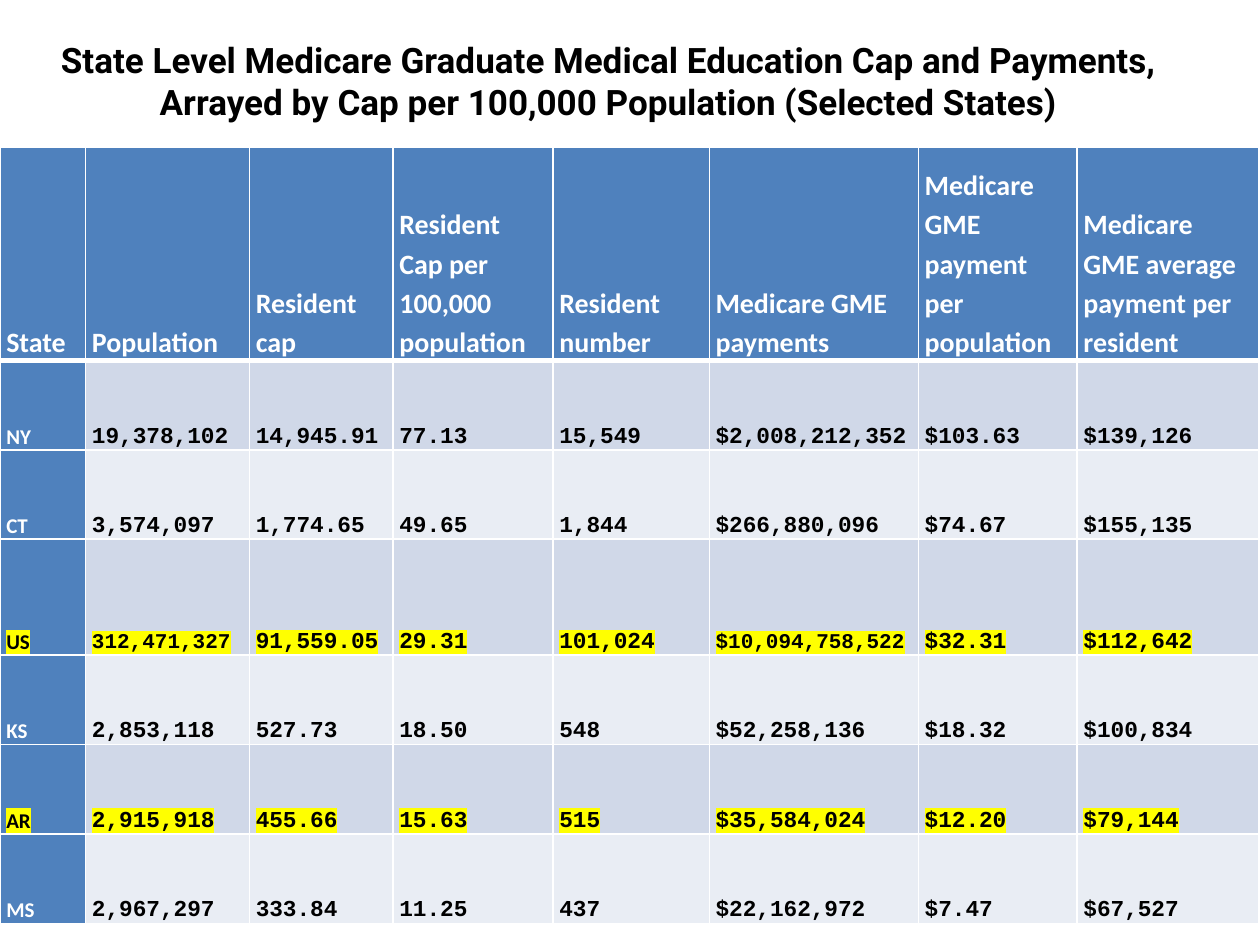
from lxml import etree
from pptx import Presentation
from pptx.dml.color import RGBColor
from pptx.enum.text import MSO_ANCHOR, PP_ALIGN
from pptx.oxml.ns import qn
from pptx.util import Inches, Pt

MIDDLE, BOTTOM = MSO_ANCHOR.MIDDLE, MSO_ANCHOR.BOTTOM
CENTER = PP_ALIGN.CENTER

COLORS = {
    "head": "4F81BD",
    "dark": "D0D8E8",
    "light": "E9EDF4",
    "white": "FFFFFF",
    "black": "000000",
    "mark": "FFFF00",
}
TITLE = ("State Level Medicare Graduate Medical Education Cap and Payments, "
         "Arrayed by Cap per 100,000 Population (Selected States)")
WIDTHS = [0.68, 1.3, 1.14, 1.27, 1.24, 1.66, 1.26, 1.44]
HEIGHTS = [1.69, 0.71, 0.71, 0.92, 0.71, 0.71, 0.71]
ROWS = [
    ["State", "Population", "Resident cap", "Resident Cap per 100,000 population",
     "Resident number", "Medicare GME payments",
     "Medicare GME payment per population",
     "Medicare GME average payment per resident"],
    ["NY", "19,378,102", "14,945.91", "77.13", "15,549", "$2,008,212,352", "$103.63", "$139,126"],
    ["CT", "3,574,097", "1,774.65", "49.65", "1,844", "$266,880,096", "$74.67", "$155,135"],
    ["US", "312,471,327", "91,559.05", "29.31", "101,024", "$10,094,758,522", "$32.31", "$112,642"],
    ["KS", "2,853,118", "527.73", "18.50", "548", "$52,258,136", "$18.32", "$100,834"],
    ["AR", "2,915,918", "455.66", "15.63", "515", "$35,584,024", "$12.20", "$79,144"],
    ["MS", "2,967,297", "333.84", "11.25", "437", "$22,162,972", "$7.47", "$67,527"],
]
MARKED = {"US", "AR"}
TIGHT = {"312,471,327", "$10,094,758,522"}


def style(para, face, size, color, mark=False):
    """Format the only run of a paragraph as bold text, marked if asked."""
    run = para.runs[0]
    font = run.font
    font.name, font.size, font.bold = face, Pt(size), True
    font.color.rgb = RGBColor.from_string(COLORS[color])
    if mark:
        light = etree.Element(qn("a:highlight"))
        etree.SubElement(light, qn("a:srgbClr"), val=COLORS["mark"])
        font.fill
        run._r.rPr.find(qn("a:solidFill")).addnext(light)


def add_edges(cell, top, bottom):
    """Draw white borders around a cell."""
    props = cell._tc.get_or_add_tcPr()
    for side, width in (("L", 1), ("R", 1), ("T", top), ("B", bottom)):
        line = etree.SubElement(props, qn(f"a:ln{side}"), w=str(Pt(width)))
        fill = etree.SubElement(line, qn("a:solidFill"))
        etree.SubElement(fill, qn("a:srgbClr"), val=COLORS["white"])


def fill_cell(cell, text, row, col, mark):
    """Write, format and shade one table cell."""
    add_edges(cell, 3 if row == 1 else 1, 3 if row == 0 else 1)
    band = "head" if row == 0 or col == 0 else "dark" if row % 2 else "light"
    cell.fill.solid()
    cell.fill.fore_color.rgb = RGBColor.from_string(COLORS[band])
    cell.vertical_anchor = BOTTOM
    cell.margin_left = cell.margin_right = Inches(0.05)
    cell.margin_top = cell.margin_bottom = 0
    para = cell.text_frame.paragraphs[0]
    para.text = text
    para.line_spacing = 1.15
    if row == 0:
        style(para, "Calibri", 16, "white")
    elif col == 0:
        style(para, "Calibri", 12, "black" if mark else "white", mark)
    else:
        style(para, "Courier New", 12 if text in TIGHT else 13, "black", mark)


def add_grid(slide):
    """Add the table of states."""
    table = slide.shapes.add_table(len(ROWS), len(WIDTHS), 0, Inches(1.17),
                                   Inches(10), Inches(sum(HEIGHTS))).table
    for column, width in zip(table.columns, WIDTHS):
        column.width = Inches(width)
    for line, height in zip(table.rows, HEIGHTS):
        line.height = Inches(height)
    for row, texts in enumerate(ROWS):
        for col, text in enumerate(texts):
            fill_cell(table.cell(row, col), text, row, col, texts[0] in MARKED)


def add_title(slide):
    """Add the centred slide title."""
    box = slide.shapes.add_textbox(Inches(0.33), Inches(0.01), Inches(9), Inches(1.25))
    frame = box.text_frame
    frame.word_wrap = True
    frame.vertical_anchor = MIDDLE
    frame.text = TITLE
    para = frame.paragraphs[0]
    para.alignment = CENTER
    style(para, "Roboto", 20, "black")


def main():
    """Build and save the slide."""
    deck = Presentation()
    deck.slide_width, deck.slide_height = Inches(10), Inches(7.5)
    slide = deck.slides.add_slide(deck.slide_layouts[6])
    add_grid(slide)
    add_title(slide)
    deck.save("out.pptx")


if __name__ == "__main__":
    main()
